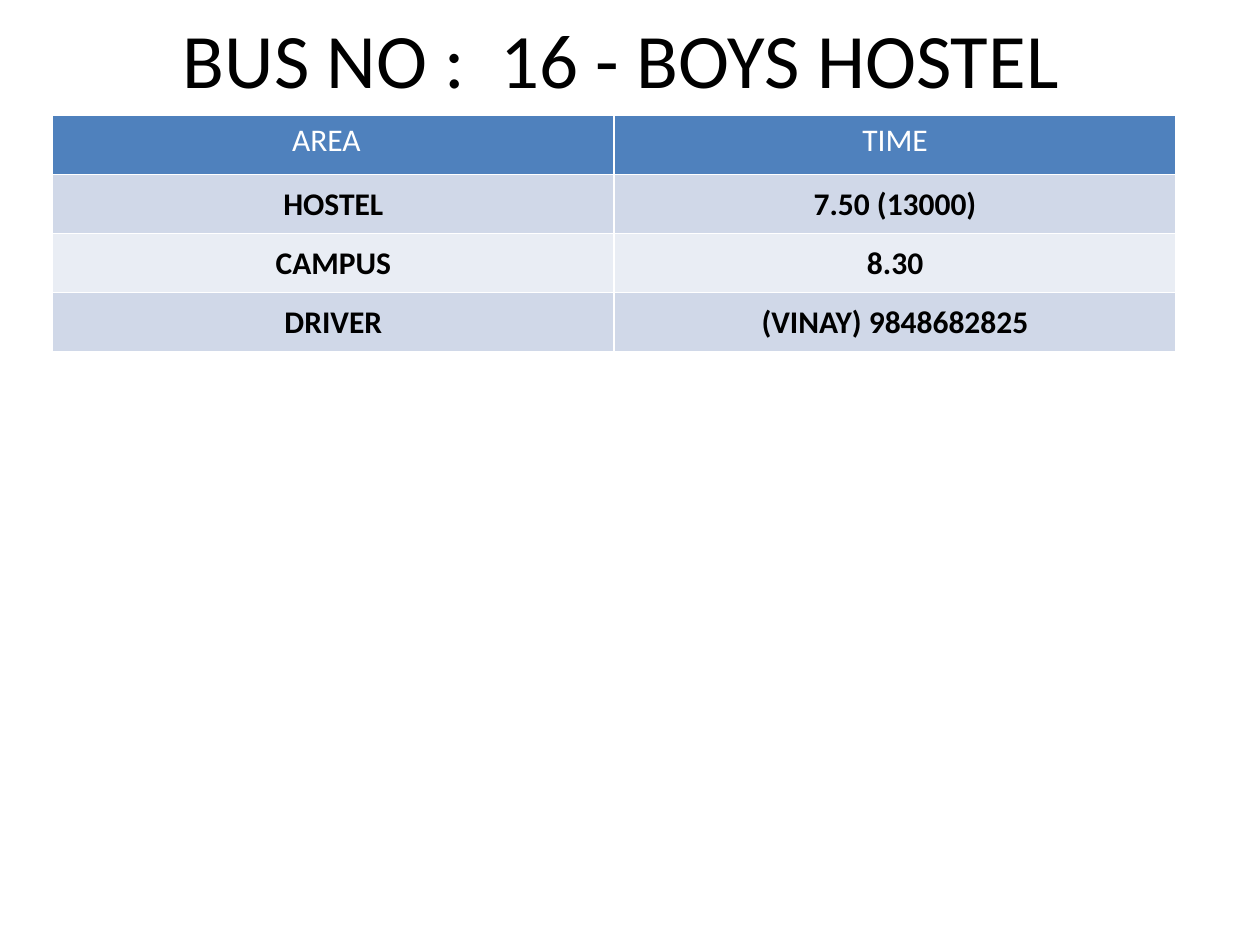
from pptx import Presentation
from pptx.dml.color import RGBColor
from pptx.enum.text import MSO_ANCHOR as Anchor, PP_ALIGN as Align
from pptx.util import Pt

TITLE = "BUS NO :  16 - BOYS HOSTEL "
HEADINGS = ("AREA", "TIME")
STOPS = [
    ("HOSTEL", "7.50 (13000)"),
    ("CAMPUS", "8.30"),
    ("DRIVER", "(VINAY) 9848682825"),
]

FONT = "Calibri"
BLACK = RGBColor(0x00, 0x00, 0x00)
WHITE = RGBColor(0xFF, 0xFF, 0xFF)
HEADER_BLUE = RGBColor(0x4F, 0x81, 0xBD)
BANDS = (RGBColor(0xD0, 0xD8, 0xE8), RGBColor(0xE9, 0xED, 0xF4))

TITLE_HEIGHT = 66
TABLE_LEFT, TABLE_WIDTH = 30, 642
ROW_HEIGHT = 33.75
HEADER_RIGHT_INSETS = (15.2, 7.2)
BODY_INSET = 0.7


def add_text(frame, text, size, color, bold=False):
    paragraph = frame.paragraphs[0]
    paragraph.alignment = Align.CENTER
    run = paragraph.add_run()
    run.text = text
    run.font.name = FONT
    run.font.size = Pt(size)
    run.font.bold = bold
    run.font.color.rgb = color


def fill_cell(cell, text, fill, color, bold):
    cell.fill.solid()
    cell.fill.fore_color.rgb = fill
    add_text(cell.text_frame, text, 18, color, bold)


def add_title(slide):
    title = slide.shapes.title
    title.left, title.top = Pt(54), Pt(0)
    title.width, title.height = Pt(612), Pt(TITLE_HEIGHT)
    title.text_frame.vertical_anchor = Anchor.MIDDLE
    add_text(title.text_frame, TITLE, 44, BLACK)


def add_timetable(slide):
    row_count = len(STOPS) + 1
    table = slide.shapes.add_table(
        row_count, len(HEADINGS), Pt(TABLE_LEFT), Pt(TITLE_HEIGHT),
        Pt(TABLE_WIDTH), Pt(ROW_HEIGHT * row_count)).table

    for column, heading in enumerate(HEADINGS):
        cell = table.cell(0, column)
        cell.margin_right = Pt(HEADER_RIGHT_INSETS[column])
        fill_cell(cell, heading, HEADER_BLUE, WHITE, False)

    for row, stop in enumerate(STOPS):
        for column, text in enumerate(stop):
            cell = table.cell(row + 1, column)
            cell.margin_left = cell.margin_right = cell.margin_top = Pt(BODY_INSET)
            cell.margin_bottom = Pt(0)
            cell.vertical_anchor = Anchor.MIDDLE
            fill_cell(cell, text, BANDS[row % 2], BLACK, True)


def main():
    presentation = Presentation()
    presentation.slide_width, presentation.slide_height = Pt(720), Pt(540)
    slide = presentation.slides.add_slide(presentation.slide_layouts[5])
    add_title(slide)
    add_timetable(slide)
    presentation.save("out.pptx")


if __name__ == "__main__":
    main()
